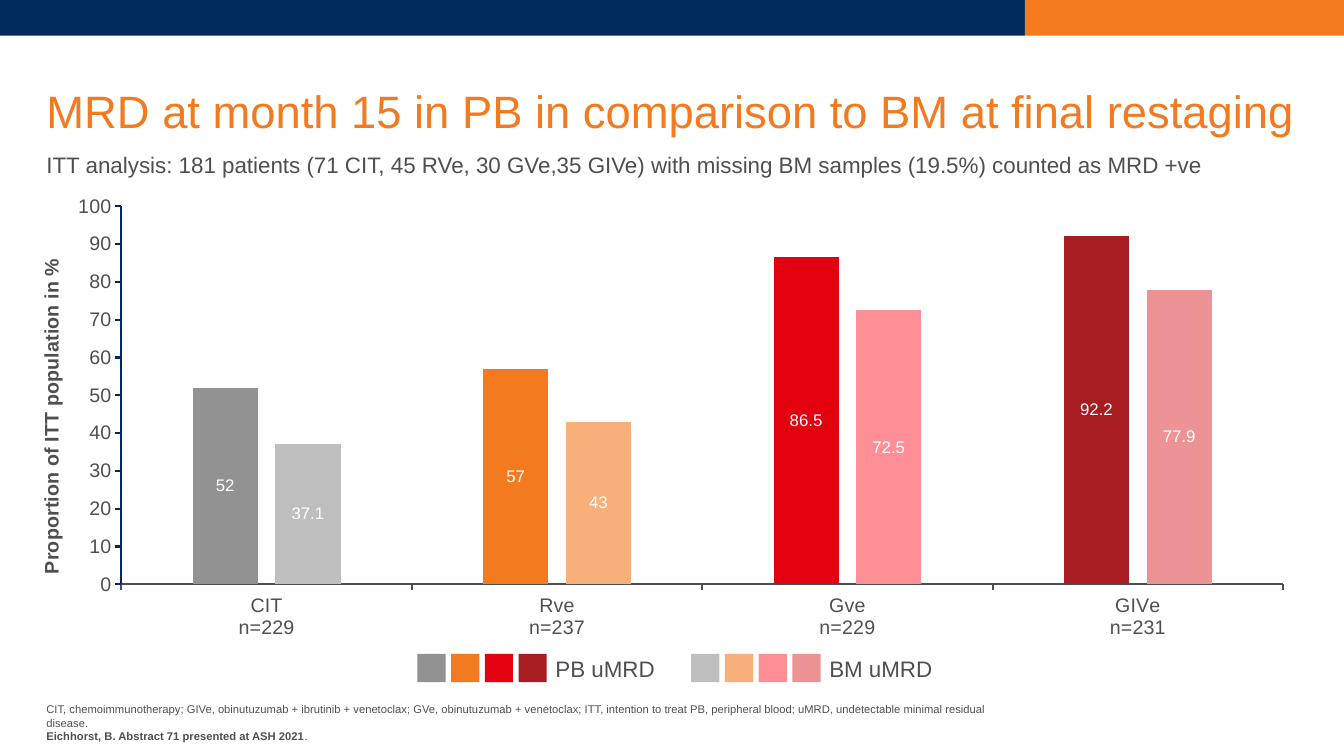
from dataclasses import dataclass

import pptx
import pptx.chart.data
import pptx.dml.color
import pptx.dml.line
import pptx.enum.chart
import pptx.enum.shapes
import pptx.enum.text
import pptx.oxml
import pptx.oxml.ns
import pptx.util
from pptx.util import Cm

COLOURS = {"navy": "002A5C", "orange": "F47A20", "text": "4E4F4E", "white": "FFFFFF"}
ANCHOR = pptx.enum.text.MSO_ANCHOR
FIXED = pptx.enum.text.MSO_AUTO_SIZE.NONE


@dataclass
class Band:
    left: float
    width: float
    colour: str


@dataclass
class Sample:
    series: str
    label: str
    key_left: float
    values: tuple[float, ...]
    tints: tuple[str, ...]


BANDS = [Band(0, 25.83, COLOURS["navy"]), Band(25.83, 8.04, COLOURS["orange"])]
ARMS = ["CIT\nn=229", "Rve\nn=237", "Gve\nn=229", "GIVe\nn=231"]
SAMPLES = [
    Sample("Series 1", "PB uMRD", 10.52, (52, 57, 86.5, 92.2),
           ("929292", "F47A20", "E3010F", "A71C20")),
    Sample("Series 2", "BM uMRD", 17.42, (37.1, 43, 72.5, 77.9),
           ("BEBEBE", "F8AF79", "FF8F96", "ED9396")),
]


def rgb(colour: str) -> pptx.dml.color.RGBColor:
    return pptx.dml.color.RGBColor.from_string(colour)


def apply(target: object, settings: dict) -> None:
    for name, value in settings.items():
        setattr(target, name, value)


def style_font(font: pptx.text.text.Font, size: float, colour: str, bold: bool = False) -> None:
    apply(font, {"name": "Arial", "size": pptx.util.Pt(size), "bold": bold})
    font.color.rgb = rgb(colour)


def place(shape: object, left: float, top: float, width: float, height: float) -> None:
    apply(shape, {"left": Cm(left), "top": Cm(top), "width": Cm(width), "height": Cm(height)})


def frame_format(anchor: ANCHOR, inset_top: float = 0) -> dict:
    return {"word_wrap": True, "auto_size": FIXED, "vertical_anchor": anchor,
            "margin_left": 0, "margin_right": 0, "margin_bottom": 0,
            "margin_top": Cm(inset_top)}


def add_block(shapes: object, left: float, top: float, width: float, height: float,
              colour: str) -> None:
    block = shapes.add_shape(pptx.enum.shapes.MSO_SHAPE.RECTANGLE,
                             Cm(left), Cm(top), Cm(width), Cm(height))
    block.shadow.inherit = False
    block.fill.solid()
    block.fill.fore_color.rgb = rgb(colour)
    block.line.fill.background()


def set_layout(element: object, **fractions: float) -> None:
    """Pin a chart part to fractions of the chart area."""
    inner = '<c:layoutTarget val="inner"/>' if "w" in fractions else ""
    modes = "".join(f'<c:{key}Mode val="edge"/>' for key in "xy")
    places = "".join(f'<c:{key} val="{value}"/>' for key, value in fractions.items())
    layout = pptx.oxml.parse_xml(
        f'<c:layout {pptx.oxml.ns.nsdecls("c")}><c:manualLayout>'
        f"{inner}{modes}{places}</c:manualLayout></c:layout>")
    present = element.find(pptx.oxml.ns.qn("c:layout"))
    if present is None:
        element.insert(0, layout)
    else:
        element.replace(present, layout)


def add_headings(slide: pptx.slide.Slide) -> None:
    title, subtitle = slide.shapes.title, slide.placeholders[1]
    place(title, 1.17, 0.99, 31.57, 2.49)
    place(subtitle, 1.17, 3.23, 31.55, 1.8)
    title.text_frame.text = "MRD at month 15 in PB in comparison to BM at final restaging"
    subtitle.text_frame.text = ("ITT analysis: 181 patients (71 CIT, 45 RVe, 30 GVe,35 GIVe) "
                                "with missing BM samples (19.5%) counted as MRD +ve")
    apply(title.text_frame, frame_format(ANCHOR.BOTTOM))
    apply(subtitle.text_frame, frame_format(ANCHOR.MIDDLE, 0.1))

    # The subtitle is plain text without a bullet
    properties = subtitle.text_frame.paragraphs[0]._p.get_or_add_pPr()
    apply_indent = {"marL": "0", "indent": "0"}
    for name, value in apply_indent.items():
        properties.set(name, value)
    properties.append(pptx.oxml.parse_xml(f'<a:buNone {pptx.oxml.ns.nsdecls("a")}/>'))

    for heading, size, colour in ((title, 32.4, "orange"), (subtitle, 16, "text")):
        paragraph = heading.text_frame.paragraphs[0]
        apply(paragraph, {"alignment": pptx.enum.text.PP_ALIGN.LEFT,
                          "line_spacing": 0.9, "space_before": pptx.util.Pt(0)})
        style_font(paragraph.font, size, COLOURS[colour])


def add_mrd_chart(slide: pptx.slide.Slide) -> None:
    mrd = pptx.chart.data.CategoryChartData()
    mrd.categories = ARMS
    for sample in SAMPLES:
        mrd.add_series(sample.series, sample.values)
    chart = slide.shapes.add_chart(
        pptx.enum.chart.XL_CHART_TYPE.COLUMN_CLUSTERED,
        Cm(0.69), Cm(4.75), Cm(32.03), Cm(12.47), mrd).chart
    apply(chart, {"has_legend": False, "has_title": False})
    style_font(chart.font, 10, COLOURS["text"])
    set_layout(chart._chartSpace.chart.plotArea, x=0.074, y=0.036, w=0.914, h=0.764)

    # Columns and their values
    plot = chart.plots[0]
    apply(plot, {"gap_width": 219, "overlap": -27, "vary_by_categories": False})
    for series, sample in zip(plot.series, SAMPLES):
        for index, tint in enumerate(sample.tints):
            fill = series.points[index].format.fill
            fill.solid()
            fill.fore_color.rgb = rgb(tint)
        apply(series.data_labels, {"show_value": True,
                                   "position": pptx.enum.chart.XL_LABEL_POSITION.CENTER})
        style_font(series.data_labels.font, 12, COLOURS["white"])

    # Axes
    share, arms = chart.value_axis, chart.category_axis
    apply(share, {"minimum_scale": 0, "maximum_scale": 100, "major_unit": 10})
    for axis, colour in ((share, "navy"), (arms, "text")):
        apply(axis, {"has_major_gridlines": False,
                     "major_tick_mark": pptx.enum.chart.XL_TICK_MARK.OUTSIDE,
                     "minor_tick_mark": pptx.enum.chart.XL_TICK_MARK.NONE})
        axis.format.line.width = pptx.util.Pt(1.5)
        axis.format.line.color.rgb = rgb(COLOURS[colour])
        style_font(axis.tick_labels.font, 14, COLOURS["text"])
    caption = share.axis_title.text_frame
    caption.text = "Proportion of ITT population in %"
    caption._txBody.bodyPr.set("rot", "-5400000")
    style_font(caption.paragraphs[0].runs[0].font, 14, COLOURS["text"], bold=True)
    set_layout(share.axis_title._element, x=0.006, y=0.134)


def add_key(slide: pptx.slide.Slide, sample: Sample) -> None:
    key = slide.shapes.add_group_shape().shapes
    for index, tint in enumerate(sample.tints):
        add_block(key, sample.key_left + 0.85 * index, 16.48, 0.71, 0.71, tint)
    label = key.add_textbox(Cm(sample.key_left + 3.23), Cm(16.38), Cm(4.62), Cm(0.94))
    label.text_frame.word_wrap = True
    label.text_frame.text = sample.label
    style_font(label.text_frame.paragraphs[0].runs[0].font, 16, COLOURS["text"])


def add_footnote(slide: pptx.slide.Slide) -> None:
    footnote = slide.shapes.add_textbox(Cm(1.17), Cm(17.65), Cm(23.8), Cm(1.07)).text_frame
    apply(footnote, frame_format(ANCHOR.BOTTOM))
    abbreviations, source = footnote.paragraphs[0], footnote.add_paragraph()
    pieces = [
        (abbreviations, "CIT, chemoimmunotherapy; GIVe, obinutuzumab + ibrutinib + venetoclax; "
         "GVe, obinutuzumab + venetoclax; ITT, intention to treat PB, peripheral blood; "
         "uMRD, undetectable minimal residual disease.", False),
        (source, "Eichhorst, B. Abstract 71 presented at ASH 2021", True),
        (source, ".", False),
    ]
    for paragraph, wording, bold in pieces:
        run = paragraph.add_run()
        run.text = wording
        style_font(run.font, 8, COLOURS["text"], bold)


def main() -> None:
    deck = pptx.Presentation()
    apply(deck, {"slide_width": Cm(33.87), "slide_height": Cm(19.05)})
    slide = deck.slides.add_slide(deck.slide_layouts[1])
    for band in BANDS:
        add_block(slide.shapes, band.left, 0, band.width, 0.9, band.colour)
    add_headings(slide)
    add_mrd_chart(slide)
    for sample in SAMPLES:
        add_key(slide, sample)
    add_footnote(slide)
    deck.save("out.pptx")


if __name__ == "__main__":
    main()
